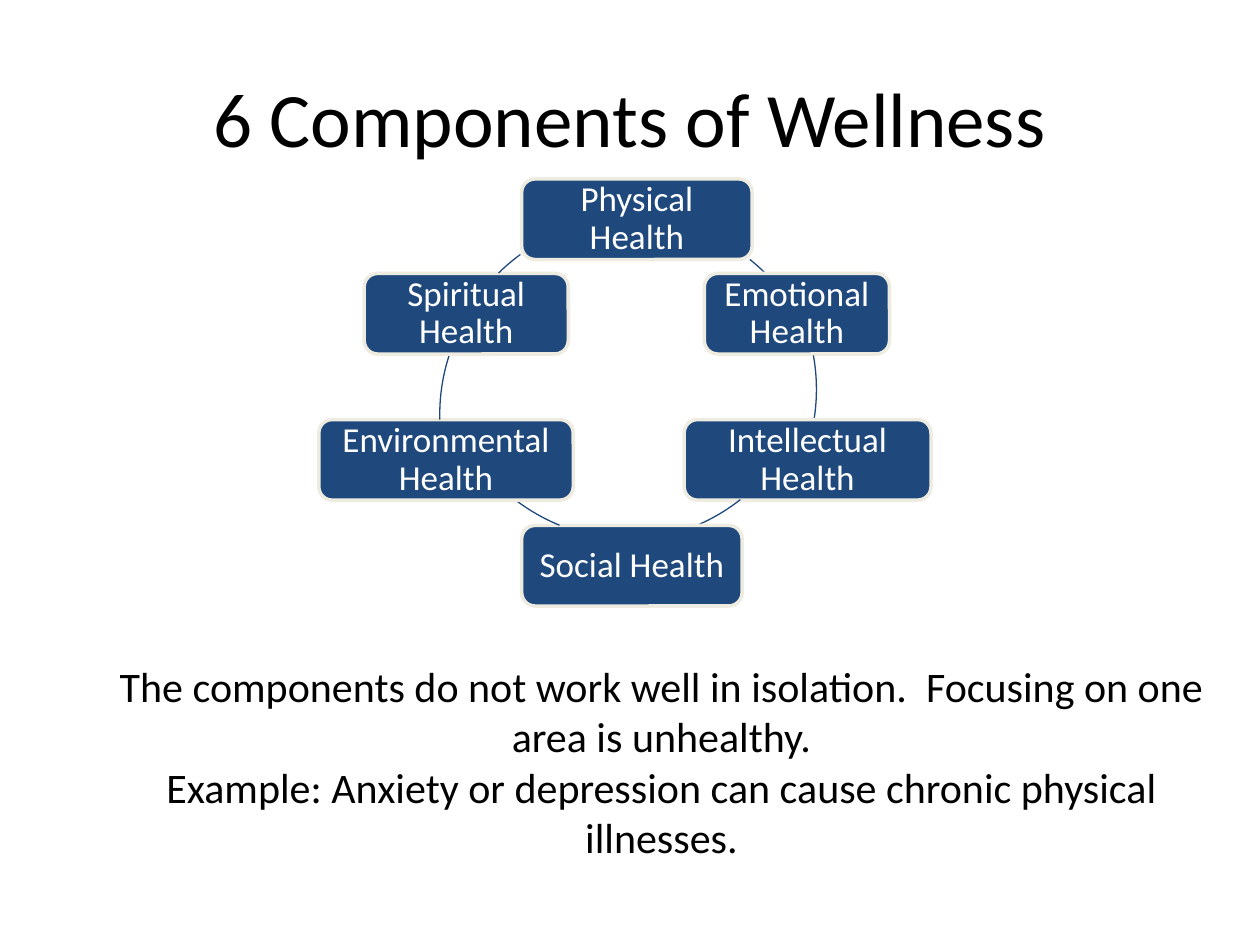
from dataclasses import dataclass
from math import atan2, degrees

from lxml import etree
from pptx import Presentation
from pptx.dml.color import RGBColor
from pptx.enum.shapes import MSO_SHAPE
from pptx.enum.text import MSO_ANCHOR, MSO_AUTO_SIZE, PP_ALIGN
from pptx.oxml.ns import qn
from pptx.util import Inches, Pt

ROUNDED, ARC = MSO_SHAPE.ROUNDED_RECTANGLE, MSO_SHAPE.ARC
MIDDLE, BOTTOM = MSO_ANCHOR.MIDDLE, MSO_ANCHOR.BOTTOM
CENTER = PP_ALIGN.CENTER
NO_AUTOFIT = MSO_AUTO_SIZE.NONE


@dataclass(frozen=True)
class Theme:
    """Colours, font and type sizes of the slide."""
    font: str = "Calibri"
    ink: RGBColor = RGBColor(0x00, 0x00, 0x00)
    navy: RGBColor = RGBColor(0x1F, 0x49, 0x7D)
    cream: RGBColor = RGBColor(0xEE, 0xEC, 0xE1)
    white: RGBColor = RGBColor(0xFF, 0xFF, 0xFF)
    title_size: int = 44
    body_size: int = 24
    component_size: int = 20


THEME = Theme()
COMPONENT_HEIGHT = 0.64
RING_DIAMETER = 3.02

COMPONENTS = [
    ("Physical Health", 4.14, 1.42, 1.83),
    ("Emotional Health", 5.59, 2.17, 1.47),
    ("Intellectual Health", 5.43, 3.33, 1.96),
    ("Social Health", 4.14, 4.17, 1.75),
    ("Environmental Health", 2.53, 3.33, 2.02),
    ("Spiritual Health", 2.89, 2.17, 1.62),
]

RING_SEGMENTS = [
    ((3.5, 1.73), (5.95, 2.06), (6.08, 2.17)),
    ((3.46, 1.58), (6.46, 2.82), (6.47, 3.32)),
    ((3.43, 1.27), (5.88, 3.97), (5.55, 4.17)),
    ((3.5, 1.26), (4.44, 4.17), (4.11, 3.98)),
    ((3.49, 1.78), (3.49, 3.33), (3.57, 2.82)),
    ((3.51, 1.73), (3.96, 2.17), (4.13, 2.02)),
]

TAKEAWAYS = [
    "The components do not work well in isolation.  Focusing on one area is unhealthy.",
    "Example: Anxiety or depression can cause chronic physical illnesses.",
]


def place(placeholder, left, top, width, height):
    """Move and size a placeholder, in inches."""
    placeholder.left, placeholder.top = Inches(left), Inches(top)
    placeholder.width, placeholder.height = Inches(width), Inches(height)


def style_paragraph(paragraph, size, color):
    """Centre a paragraph and set its font."""
    paragraph.alignment = CENTER
    paragraph.font.name = THEME.font
    paragraph.font.size = Pt(size)
    paragraph.font.color.rgb = color


def set_margins(frame, left, top, right, bottom):
    """Set the inner margins of a text frame, in inches."""
    frame.margin_left, frame.margin_top = Inches(left), Inches(top)
    frame.margin_right, frame.margin_bottom = Inches(right), Inches(bottom)


def remove_bullet(paragraph):
    """Drop the bullet and hanging indent inherited from the layout."""
    properties = paragraph._p.get_or_add_pPr()
    properties.set("marL", "0")
    properties.set("indent", "0")
    etree.SubElement(properties, qn("a:buNone"))


def fill_title(title, text):
    """Write the slide title."""
    place(title, 0.5, 0.3, 9, 1.25)
    title.text_frame.text = text
    title.text_frame.vertical_anchor = MIDDLE
    style_paragraph(title.text_frame.paragraphs[0], THEME.title_size, THEME.ink)


def fill_takeaways(body, takeaways):
    """Write the closing statements, one paragraph each."""
    place(body, 0.75, 4.92, 9, 1.92)
    frame = body.text_frame
    frame.text = "\n".join(takeaways)
    frame.auto_size = NO_AUTOFIT
    frame.vertical_anchor = BOTTOM
    set_margins(frame, 0, 0.05, 0, 0)
    for paragraph in frame.paragraphs:
        style_paragraph(paragraph, THEME.body_size, THEME.ink)
        paragraph.space_before = Pt(0)
        remove_bullet(paragraph)


def add_component(slide, label, left, top, width):
    """Add one labelled wellness component."""
    component = slide.shapes.add_shape(
        ROUNDED, Inches(left), Inches(top), Inches(width), Inches(COMPONENT_HEIGHT))
    component.shadow.inherit = False
    component.fill.solid()
    component.fill.fore_color.rgb = THEME.navy
    component.line.color.rgb = THEME.cream
    component.line.width = Pt(2)
    frame = component.text_frame
    frame.text = label
    frame.word_wrap = True
    frame.vertical_anchor = MIDDLE
    set_margins(frame, 0.08, 0.08, 0.08, 0.08)
    paragraph = frame.paragraphs[0]
    style_paragraph(paragraph, THEME.component_size, THEME.white)
    paragraph.line_spacing = 0.9


def add_ring_segment(slide, corner, start, end):
    """Add the clockwise arc of a ring between two points."""
    left, top = corner
    radius = RING_DIAMETER / 2
    segment = slide.shapes.add_shape(
        ARC, Inches(left), Inches(top), Inches(RING_DIAMETER), Inches(RING_DIAMETER))
    for index, (x, y) in enumerate((start, end)):
        angle = degrees(atan2(y - top - radius, x - left - radius)) % 360
        segment.adjustments[index] = angle * 0.6
    segment.shadow.inherit = False
    segment.fill.background()
    segment.line.color.rgb = THEME.navy
    segment.line.width = Pt(0.75)


def main():
    """Build and save the wellness slide."""
    presentation = Presentation()
    presentation.slide_width, presentation.slide_height = Inches(10), Inches(7.5)
    slide = presentation.slides.add_slide(presentation.slide_layouts[1])
    fill_title(slide.shapes.title, "6 Components of Wellness")
    fill_takeaways(slide.placeholders[1], TAKEAWAYS)
    for component, segment in zip(COMPONENTS, RING_SEGMENTS):
        add_component(slide, *component)
        add_ring_segment(slide, *segment)
    presentation.save("out.pptx")


if __name__ == "__main__":
    main()
